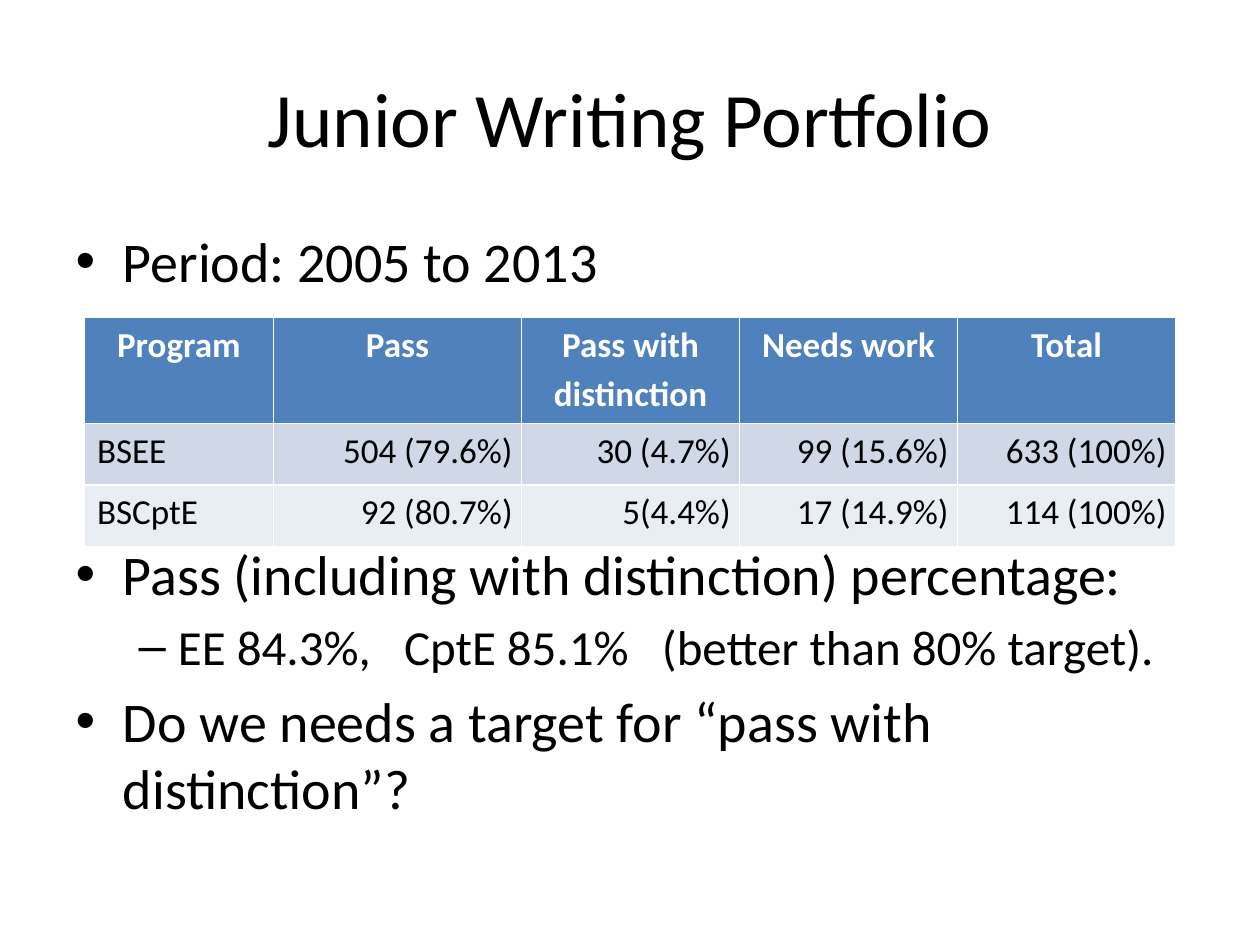
from pptx import Presentation
from pptx.dml.color import RGBColor
from pptx.enum.text import PP_ALIGN
from pptx.util import Inches, Pt

FONT = "Calibri"
COLORS = {
    "text": "000000",
    "header_text": "FFFFFF",
    "header": "4F81BD",
    "odd_row": "D0D8E8",
    "even_row": "E9EDF4",
}
RESULTS = [
    ["Program", "Pass", "Pass with distinction", "Needs work", "Total"],
    ["BSEE", "504 (79.6%)", "30 (4.7%)", "99 (15.6%)", "633 (100%)"],
    ["BSCptE", "92 (80.7%)", "5(4.4%)", "17 (14.9%)", "114 (100%)"],
]
COL_WIDTHS = [1.5, 1.97, 1.73, 1.73, 1.73]
ROW_HEIGHTS = [0.84, 0.49, 0.49]
ROW_FILLS = ["header", "odd_row", "even_row"]
TABLE_GAP = 140
BULLETS = [
    ("Period: 2005 to 2013", 0, 32, None),
    ("Pass (including with distinction) percentage:", 0, 32, TABLE_GAP),
    ("EE 84.3%,   CptE 85.1%   (better than 80% target).", 1, 28, None),
    ("Do we needs a target for “pass with distinction”?", 0, 32, None),
]


def rgb(name):
    return RGBColor.from_string(COLORS[name])


def place(sp, left, top, width, height):
    sp.left, sp.top = Inches(left), Inches(top)
    sp.width, sp.height = Inches(width), Inches(height)


def style_paragraph(p, size, color="text", bold=False):
    p.font.name = FONT
    p.font.size = Pt(size)
    p.font.bold = bold
    p.font.color.rgb = rgb(color)


def add_title(s, text):
    title = s.shapes.title
    place(title, 0.5, 0.3, 9, 1.25)
    title.text_frame.text = text
    p = title.text_frame.paragraphs[0]
    p.alignment = PP_ALIGN.CENTER
    style_paragraph(p, 44)


def add_bullets(s, bullets):
    body = s.placeholders[1]
    place(body, 0.5, 1.75, 9, 5.54)
    tf = body.text_frame
    tf.text = "\n".join(text for text, *_ in bullets)
    for p, (_, level, size, gap) in zip(tf.paragraphs, bullets):
        p.level = level
        style_paragraph(p, size)
        if gap:
            p.space_before = Pt(gap)


def fill_cell(cell, text, row, col):
    is_header = row == 0
    cell.fill.solid()
    cell.fill.fore_color.rgb = rgb(ROW_FILLS[row])
    cell.text = text
    p = cell.text_frame.paragraphs[0]
    style_paragraph(p, 20, "header_text" if is_header else "text", is_header)
    if is_header:
        p.alignment = PP_ALIGN.CENTER
    elif col:
        p.alignment = PP_ALIGN.RIGHT
    if col:
        p.line_spacing = 1.15
        cell.margin_left = cell.margin_right = Inches(0.07)
        cell.margin_top = cell.margin_bottom = 0


def add_results_table(s, rows):
    table = s.shapes.add_table(
        len(rows), len(COL_WIDTHS), Inches(0.67), Inches(2.52),
        Inches(sum(COL_WIDTHS)), Inches(sum(ROW_HEIGHTS)),
    ).table
    for column, width in zip(table.columns, COL_WIDTHS):
        column.width = Inches(width)
    for row, height in zip(table.rows, ROW_HEIGHTS):
        row.height = Inches(height)
    for r, texts in enumerate(rows):
        for c, text in enumerate(texts):
            fill_cell(table.cell(r, c), text, r, c)


def main():
    prs = Presentation()
    prs.slide_width, prs.slide_height = Inches(10), Inches(7.5)
    s = prs.slides.add_slide(prs.slide_layouts[1])
    add_title(s, "Junior Writing Portfolio")
    add_results_table(s, RESULTS)
    add_bullets(s, BULLETS)
    prs.save("out.pptx")


if __name__ == "__main__":
    main()
